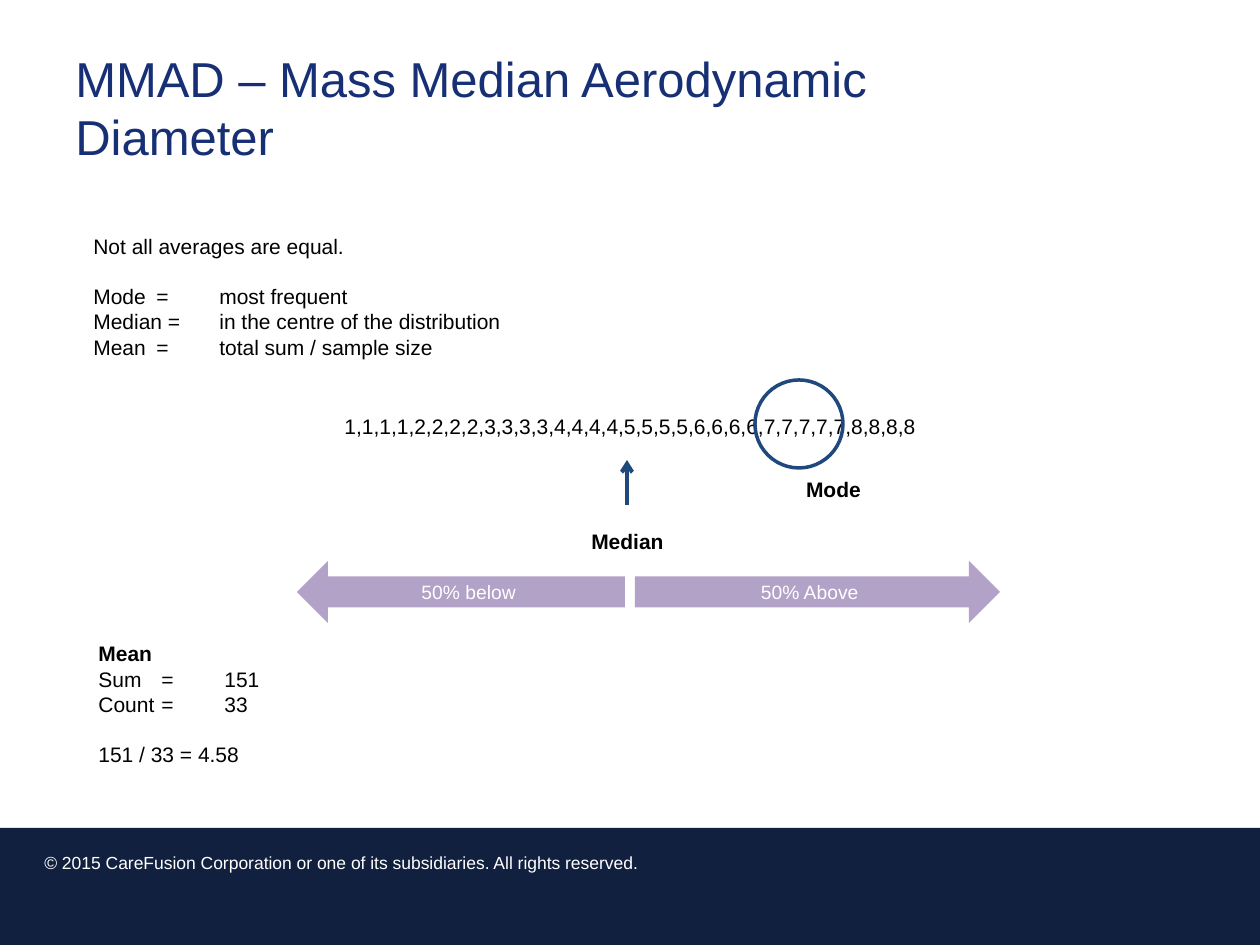
from dataclasses import dataclass

from lxml.etree import SubElement
from pptx import Presentation
from pptx.dml.color import RGBColor
from pptx.enum.shapes import MSO_CONNECTOR, MSO_SHAPE
from pptx.enum.text import MSO_ANCHOR, PP_ALIGN
from pptx.oxml.ns import qn
from pptx.shapes.autoshape import Shape
from pptx.slide import Slide
from pptx.util import Pt

EMU_PER_PX = 914400 / 126
COLORS = {
    "title": "173075",
    "text": "000000",
    "white": "FFFFFF",
    "band": "11203F",
    "outline": "1F497D",
    "arrow": "B3A2C7",
}
TAB_STOPS = (63, 126)
BLOCK_GAP = Pt(14)


@dataclass(frozen=True)
class Box:
    left: int
    top: int
    width: int
    height: int


@dataclass(frozen=True)
class Line:
    text: str
    bold: bool = False
    starts_block: bool = False


@dataclass(frozen=True)
class TextBlock:
    box: Box
    lines: tuple[Line, ...]
    size: int = 12
    color: str = "text"
    align: PP_ALIGN = PP_ALIGN.LEFT
    anchor: MSO_ANCHOR = MSO_ANCHOR.TOP
    margin_top: int = 6


@dataclass(frozen=True)
class HalfArrow:
    kind: MSO_SHAPE
    box: Box
    label: str


TEXT_BLOCKS = (
    TextBlock(Box(63, 38, 931, 157), (Line("MMAD – Mass Median Aerodynamic Diameter"),),
              size=28, color="title", margin_top=10),
    TextBlock(Box(32, 838, 780, 50),
              (Line("© 2015 CareFusion Corporation or one of its subsidiaries. All rights reserved."),),
              size=10, color="white", anchor=MSO_ANCHOR.MIDDLE),
    TextBlock(Box(81, 228, 1099, 140), (
        Line("Not all averages are equal."),
        Line("Mode \t= \tmost frequent", starts_block=True),
        Line("Median = \tin the centre of the distribution"),
        Line("Mean \t= \ttotal sum / sample size"),
    )),
    TextBlock(Box(81, 408, 1099, 38),
              (Line("1,1,1,1,2,2,2,2,3,3,3,3,4,4,4,4,5,5,5,5,6,6,6,6,7,7,7,7,7,8,8,8,8"),),
              align=PP_ALIGN.CENTER),
    TextBlock(Box(86, 635, 549, 140), (
        Line("Mean", bold=True),
        Line("Sum \t= \t151"),
        Line("Count \t= \t33"),
        Line("151 / 33 = 4.58", starts_block=True),
    )),
    TextBlock(Box(727, 471, 213, 38), (Line("Mode", bold=True),), align=PP_ALIGN.CENTER),
    TextBlock(Box(521, 523, 213, 38), (Line("Median", bold=True),), align=PP_ALIGN.CENTER),
)
HALF_ARROWS = (
    HalfArrow(MSO_SHAPE.LEFT_ARROW, Box(297, 561, 328, 62), "50% below"),
    HalfArrow(MSO_SHAPE.RIGHT_ARROW, Box(635, 561, 365, 62), "50% Above"),
)


def px(length: int) -> int:
    return round(length * EMU_PER_PX)


def place(box: Box) -> tuple[int, ...]:
    return tuple(px(length) for length in (box.left, box.top, box.width, box.height))


def rgb(name: str) -> RGBColor:
    return RGBColor.from_string(COLORS[name])


def add_tab_stops(paragraph) -> None:
    tabs = SubElement(paragraph._p.get_or_add_pPr(), qn("a:tabLst"))
    for position in TAB_STOPS:
        SubElement(tabs, qn("a:tab"), pos=str(px(position)), algn="l")


def write_lines(shape: Shape, block: TextBlock) -> None:
    frame = shape.text_frame
    frame_format = {"word_wrap": True, "vertical_anchor": block.anchor,
                    "margin_top": px(block.margin_top)}
    for name, value in frame_format.items():
        setattr(frame, name, value)
    for index, line in enumerate(block.lines):
        paragraph = frame.add_paragraph() if index else frame.paragraphs[0]
        paragraph.text = line.text
        paragraph.alignment = block.align
        if line.starts_block:
            paragraph.space_before = BLOCK_GAP
        if "\t" in line.text:
            add_tab_stops(paragraph)
        font = paragraph.runs[0].font
        font_format = {"name": "Arial", "size": Pt(block.size), "bold": line.bold}
        for name, value in font_format.items():
            setattr(font, name, value)
        font.color.rgb = rgb(block.color)


def add_filled_shape(slide: Slide, kind: MSO_SHAPE, box: Box, color: str) -> Shape:
    shape = slide.shapes.add_shape(kind, *place(box))
    shape.shadow.inherit = False
    shape.fill.solid()
    shape.fill.fore_color.rgb = rgb(color)
    shape.line.fill.background()
    return shape


def add_mode_circle(slide: Slide) -> None:
    circle = slide.shapes.add_shape(MSO_SHAPE.OVAL, *place(Box(755, 380, 88, 88)))
    circle.shadow.inherit = False
    circle.fill.background()
    circle.line.color.rgb = rgb("outline")
    circle.line.width = Pt(2)


def add_median_pointer(slide: Slide) -> None:
    pointer = slide.shapes.add_connector(
        MSO_CONNECTOR.STRAIGHT, px(627), px(505), px(627), px(460))
    pointer.line.color.rgb = rgb("outline")
    pointer.line.width = Pt(2.25)
    SubElement(pointer.line._get_or_add_ln(), qn("a:tailEnd"), type="arrow")
    SubElement(pointer._element.spPr, qn("a:effectLst"))


def main() -> None:
    presentation = Presentation()
    presentation.slide_width, presentation.slide_height = px(1260), px(945)
    slide = presentation.slides.add_slide(presentation.slide_layouts[6])

    add_filled_shape(slide, MSO_SHAPE.RECTANGLE, Box(0, 828, 1260, 117), "band")
    for block in TEXT_BLOCKS:
        write_lines(slide.shapes.add_textbox(*place(block.box)), block)
    add_mode_circle(slide)
    add_median_pointer(slide)
    for arrow in HALF_ARROWS:
        shape = add_filled_shape(slide, arrow.kind, arrow.box, "arrow")
        write_lines(shape, TextBlock(arrow.box, (Line(arrow.label),), size=11, color="white",
                                     align=PP_ALIGN.CENTER, anchor=MSO_ANCHOR.MIDDLE))
    presentation.save("out.pptx")


if __name__ == "__main__":
    main()
